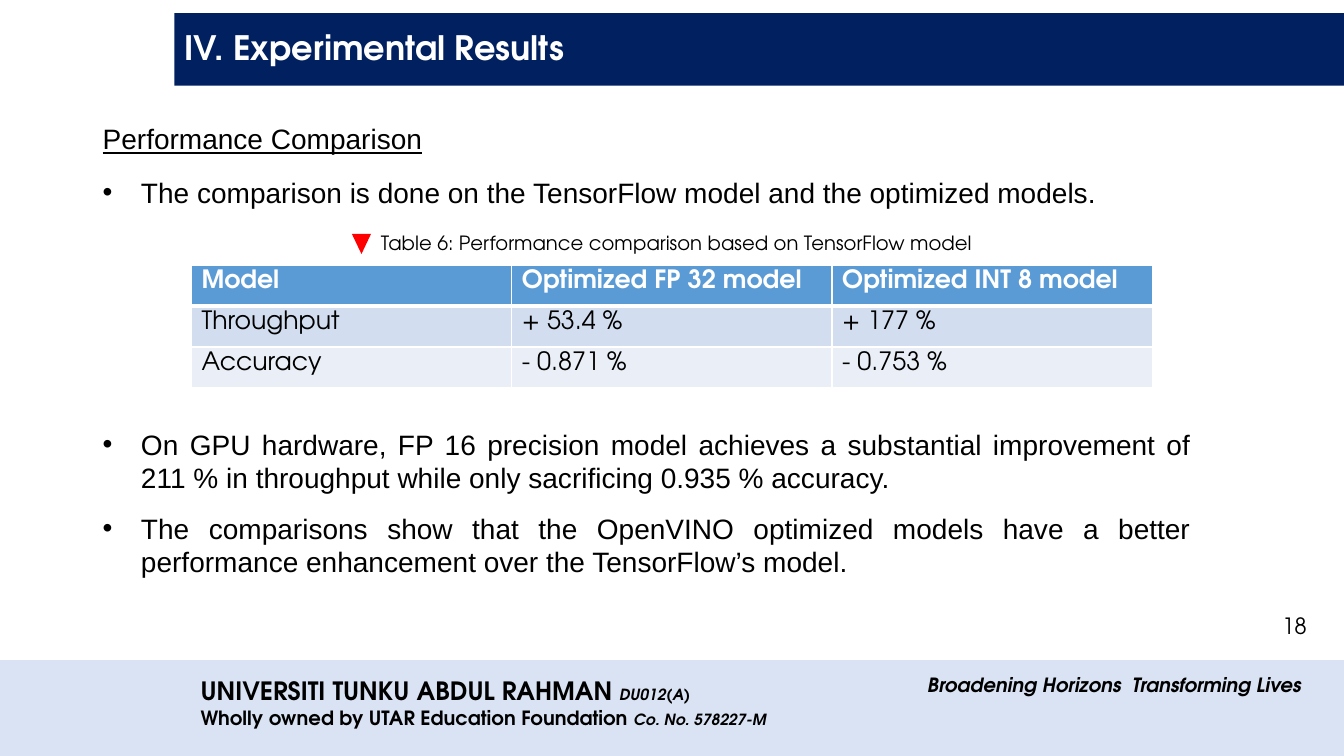
import dataclasses

import lxml.etree
import pptx
import pptx.dml.color
import pptx.enum.shapes
import pptx.enum.text
import pptx.oxml.ns
import pptx.util

Inches = pptx.util.Inches
Pt = pptx.util.Pt
Shapes = pptx.enum.shapes.MSO_SHAPE
Align = pptx.enum.text.PP_ALIGN
qn = pptx.oxml.ns.qn


@dataclasses.dataclass(frozen=True)
class Theme:
    brand_font: str = "TeX Gyre Adventor"
    body_font: str = "Arial"
    ink: str = "000000"
    white: str = "FFFFFF"
    navy: str = "002060"
    footer: str = "DAE3F3"
    marker: str = "FF0000"
    header: str = "5B9BD5"
    bands: tuple = ("D2DEEF", "EAEFF7")
    title: int = 24
    body: int = 20
    cell: int = 18
    number: int = 16
    small: int = 14
    tiny: int = 11


class SlideBuilder:
    def __init__(self, page, theme):
        self.page = page
        self.theme = theme

    def color(self, value):
        return pptx.dml.color.RGBColor.from_string(value)

    def span(self, para, text, size, font=None, color=None, **marks):
        run = para.add_run()
        run.text = text
        run.font.name = font or self.theme.brand_font
        run.font.size = Pt(size)
        run.font.color.rgb = self.color(color or self.theme.ink)
        for mark, value in marks.items():
            setattr(run.font, mark, value)

    def shape(self, kind, bounds, fill, rotation=0):
        shape = self.page.shapes.add_shape(kind, *map(Inches, bounds))
        shape.shadow.inherit = False
        shape.fill.solid()
        shape.fill.fore_color.rgb = self.color(fill)
        shape.line.fill.background()
        shape.rotation = rotation
        return shape

    def box(self, bounds, wrap=True, align=Align.LEFT):
        box = self.page.shapes.add_textbox(*map(Inches, bounds))
        frame = box.text_frame
        frame.word_wrap = wrap
        frame.auto_size = pptx.enum.text.MSO_AUTO_SIZE.SHAPE_TO_FIT_TEXT
        frame.paragraphs[0].alignment = align
        return frame

    def line(self, bounds, spans, **layout):
        para = self.box(bounds, **layout).paragraphs[0]
        for text, size, marks in spans:
            self.span(para, text, size, **marks)

    def title(self, bounds, text):
        frame = self.shape(Shapes.RECTANGLE, bounds, self.theme.navy).text_frame
        frame.vertical_anchor = pptx.enum.text.MSO_ANCHOR.MIDDLE
        para = frame.paragraphs[0]
        para.alignment = Align.LEFT
        para.line_spacing = 0.9
        self.span(para, text, self.theme.title, color=self.theme.white, bold=True)

    def bullets(self, bounds, items):
        frame = self.box(bounds)
        for index, (text, gap) in enumerate(items):
            para = frame.add_paragraph() if index else frame.paragraphs[0]
            para.alignment = Align.JUSTIFY
            if gap:
                para.space_before = Pt(gap)
            properties = para._p.get_or_add_pPr()
            properties.set("marL", str(Inches(0.38)))
            properties.set("indent", str(-Inches(0.38)))
            lxml.etree.SubElement(properties, qn("a:buFont"), typeface=self.theme.body_font)
            lxml.etree.SubElement(properties, qn("a:buChar"), char="•")
            self.span(para, text, self.theme.body, self.theme.body_font)

    def borders(self, cell, top, bottom):
        properties = cell._tc.get_or_add_tcPr()
        for side, width in (("L", 1), ("R", 1), ("T", top), ("B", bottom)):
            edge = lxml.etree.SubElement(properties, qn(f"a:ln{side}"), w=str(Pt(width)))
            fill = lxml.etree.SubElement(edge, qn("a:solidFill"))
            lxml.etree.SubElement(fill, qn("a:srgbClr"), val=self.theme.white)

    def table(self, bounds, rows):
        theme = self.theme
        table = self.page.shapes.add_table(len(rows), len(rows[0]), *map(Inches, bounds)).table
        for row_index, row in enumerate(rows):
            is_header = row_index == 0
            fill = theme.header if is_header else theme.bands[(row_index - 1) % 2]
            for column_index, text in enumerate(row):
                cell = table.cell(row_index, column_index)
                self.borders(cell, 3 if row_index == 1 else 1, 3 if is_header else 1)
                cell.fill.solid()
                cell.fill.fore_color.rgb = self.color(fill)
                color = theme.white if is_header else theme.ink
                self.span(cell.text_frame.paragraphs[0], text, theme.cell, color=color, bold=is_header)


def main():
    deck = pptx.Presentation()
    deck.slide_width = Inches(13.33)
    deck.slide_height = Inches(7.5)
    theme = Theme()
    slide = SlideBuilder(deck.slides.add_slide(deck.slide_layouts[6]), theme)
    bold = {"bold": True}
    bold_italic = {"bold": True, "italic": True}

    slide.shape(Shapes.RECTANGLE, (0, 6.55, 13.33, 0.95), theme.footer)
    slide.line((9.1, 6.63, 3.93, 0.34),
               [("Broadening Horizons  Transforming Lives", theme.small, bold_italic)], wrap=False)
    slide.line((1.89, 6.65, 5.09, 0.4),
               [("UNIVERSITI TUNKU ABDUL RAHMAN ", theme.cell, bold),
                ("DU012(A)", theme.tiny, bold_italic)], wrap=False)
    slide.line((1.89, 6.95, 5.92, 0.34),
               [("Wholly owned by UTAR Education Foundation ", theme.small, bold),
                ("Co. No. 578227-M", theme.tiny, bold_italic)], wrap=False)

    slide.title((1.73, 0.13, 11.6, 0.72), "IV. Experimental Results")
    slide.line((0.92, 1.16, 11.1, 0.94),
               [("Performance Comparison", theme.body,
                 {"font": theme.body_font, "underline": True})], align=Align.JUSTIFY)
    slide.bullets((0.92, 1.69, 10.99, 4.14), [
        ("The comparison is done on the TensorFlow model and the optimized models.", 0),
        ("On GPU hardware, FP 16 precision model achieves a substantial improvement of "
         "211 % in throughput while only sacrificing 0.935 % accuracy.", 156),
        ("The comparisons show that the OpenVINO optimized models have a better "
         "performance enhancement over the TensorFlow’s model.", 12),
    ])

    slide.table((1.9, 2.63, 9.53, 1.22), [
        ("Model", "Optimized FP 32 model", "Optimized INT 8 model"),
        ("Throughput", "+ 53.4 %", "+ 177 %"),
        ("Accuracy", "- 0.871 %", "- 0.753 %"),
    ])
    slide.line((3.68, 2.24, 6.15, 0.34),
               [("Table 6: Performance comparison based on TensorFlow model", theme.small, {})])
    slide.shape(Shapes.ISOSCELES_TRIANGLE, (3.49, 2.32, 0.19, 0.2), theme.marker, rotation=180)
    slide.line((12.53, 6.02, 0.53, 0.37), [("18", theme.number, {})], align=Align.RIGHT)

    deck.save("out.pptx")


if __name__ == "__main__":
    main()
